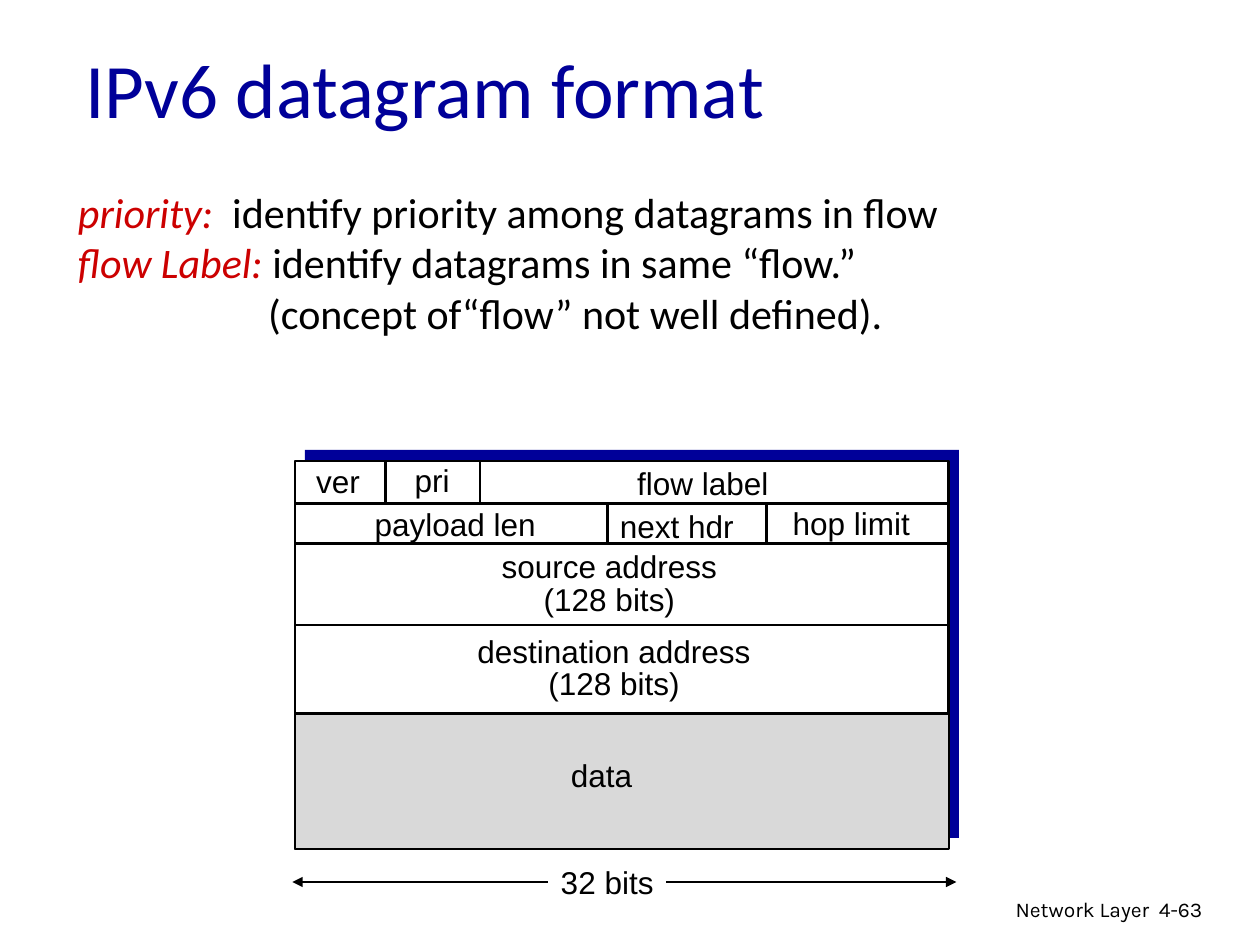
from lxml import etree
from pptx import Presentation
from pptx.dml.color import RGBColor
from pptx.enum.shapes import MSO_CONNECTOR, MSO_SHAPE
from pptx.enum.text import MSO_ANCHOR, PP_ALIGN
from pptx.oxml.ns import qn
from pptx.util import Inches, Pt

RECTANGLE, STRAIGHT = MSO_SHAPE.RECTANGLE, MSO_CONNECTOR.STRAIGHT
TOP, MIDDLE = MSO_ANCHOR.TOP, MSO_ANCHOR.MIDDLE
LEFT, CENTER, RIGHT = PP_ALIGN.LEFT, PP_ALIGN.CENTER, PP_ALIGN.RIGHT

COLORS = {"navy": "000099", "red": "CC0000", "black": "000000",
          "white": "FFFFFF", "gray": "D9D9D9"}

ROW_EDGES = [11, 21.3, 42.2, 65]
COLUMN_EDGES = [(13.9, 0, 0), (28.3, 0, 0), (47.8, 0, 1), (72.1, 0, 1)]
COLUMN_EDGES = [(x, [0, 11, 21.3][row], [11, 21.3][row]) for x, _, row in COLUMN_EDGES]
FIELDS = [
    (["ver"], 6.6, 5.2), (["pri"], 21, 4.9), (["flow label"], 62.4, 5.5),
    (["payload len"], 24.5, 16.2), (["next hdr"], 58.4, 16.6), (["hop limit"], 85.1, 15.9),
    (["source address", "(128 bits)"], 48.1, 32),
    (["destination address", "(128 bits)"], 48.8, 53.7),
    (["data"], 46.9, 80.8),
]
DEFINITIONS = [
    ("priority:", "  identify priority among datagrams in flow", 0),
    ("flow Label:", " identify datagrams in same “flow.”", 0),
    ("", "(concept of“flow” not well defined).", 1.51),
]


def color(name):
    """Return the named colour."""
    return RGBColor.from_string(COLORS[name])


def add_rect(slide, box, fill, line_width=0):
    """Draw a filled rectangle, outlined in black if a width is given."""
    rect = slide.shapes.add_shape(RECTANGLE, *map(Inches, box))
    rect.shadow.inherit = False
    rect.fill.solid()
    rect.fill.fore_color.rgb = color(fill)
    if line_width:
        rect.line.color.rgb = color("black")
        rect.line.width = Pt(line_width)
    else:
        rect.line.fill.background()


def add_line(slide, start, end, width, arrow=None):
    """Draw a black line, with an arrowhead at the named end if given."""
    line = slide.shapes.add_connector(STRAIGHT, *map(Inches, (*start, *end)))
    line.line.color.rgb = color("black")
    line.line.width = Pt(width)
    properties = line.element.spPr
    if arrow:
        etree.SubElement(properties.find(qn("a:ln")), qn(f"a:{arrow}"), type="triangle")
    etree.SubElement(properties, qn("a:effectLst"))


def add_text(slide, box, lines, font, size, ink="black", align=LEFT, anchor=TOP,
             spacing=1, wrap=True):
    """Place lines of text in a box and return its paragraphs."""
    frame = slide.shapes.add_textbox(*map(Inches, box)).text_frame
    frame.word_wrap = wrap
    frame.vertical_anchor = anchor
    frame.text = "\n".join(lines)
    for paragraph in frame.paragraphs:
        paragraph.alignment = align
        paragraph.line_spacing = spacing
        paragraph.font.name = font
        paragraph.font.size = Pt(size)
        paragraph.font.color.rgb = color(ink)
    return frame.paragraphs


def add_definitions(slide, box):
    """Write the field definitions, each opening with its red term."""
    paragraphs = add_text(slide, box, [""] * len(DEFINITIONS), "Calibri", 24)
    for paragraph, (term, meaning, indent) in zip(paragraphs, DEFINITIONS):
        if term:
            term_run = paragraph.add_run()
            term_run.text = term
            term_run.font.italic = True
            term_run.font.color.rgb = color("red")
        paragraph.add_run().text = meaning
        if indent:
            paragraph._p.get_or_add_pPr().set("marL", str(Inches(indent)))


def add_datagram(slide, box):
    """Draw the header fields and payload in percent of the box."""
    left, top, width, height = box

    def point(x, y):
        """Turn percentages of the box into a slide position."""
        return left + width * x / 100, top + height * y / 100

    add_rect(slide, (left + 0.08, top - 0.09, width, height), "navy")
    add_rect(slide, box, "white", 1.5)
    payload_left, payload_top = point(0, ROW_EDGES[-1])
    add_rect(slide, (payload_left, payload_top, width, top + height - payload_top), "gray", 0.75)
    for y in ROW_EDGES:
        add_line(slide, point(0, y), point(100, y), 1.5)
    for x, upper, lower in COLUMN_EDGES:
        add_line(slide, point(x, min(upper, lower)), point(x, max(upper, lower)), 1.5)
    for lines, x, y in FIELDS:
        center_x, center_y = point(x, y)
        label_width = 0.3 + 0.12 * max(map(len, lines))
        label_height = 0.4 if len(lines) == 1 else 0.61
        add_text(slide, (center_x - label_width / 2, center_y - label_height / 2,
                         label_width, label_height), lines, "Arial", 18, align=CENTER,
                 anchor=MIDDLE, spacing=1 if len(lines) == 1 else 0.85, wrap=False)


def add_width_ruler(slide, box):
    """Draw the arrows and caption that give the datagram's width."""
    left, top, width, height = box
    caption_width = 0.94
    caption_left = left + width * 0.385
    middle = top + height / 2
    add_line(slide, (caption_left, middle), (left, middle), 0.75, "tailEnd")
    add_line(slide, (caption_left + caption_width, middle), (left + width, middle), 0.75, "tailEnd")
    add_text(slide, (caption_left, top, caption_width, height), ["32 bits"], "Arial", 18,
             align=CENTER, anchor=MIDDLE, wrap=False)


def add_footer(slide, box):
    """Write the chapter name and the page number side by side."""
    left, top, width, height = box
    number_width = 0.74
    chapter_width = width - number_width + 0.12
    add_text(slide, (left, top, chapter_width, height), ["Network Layer"], "Karla", 12, align=RIGHT)
    add_text(slide, (left + width - number_width, top, number_width, height),
             ["4-63"], "Karla", 12)


def main():
    """Build and save the slide."""
    deck = Presentation()
    deck.slide_width, deck.slide_height = Inches(10), Inches(7.5)
    slide = deck.slides.add_slide(deck.slide_layouts[6])
    add_footer(slide, (6.05, 7.07, 3.79, 0.3))
    add_text(slide, (0.58, 0.2, 8.5, 0.99), ["IPv6 datagram format"], "Calibri", 44,
             "navy", anchor=MIDDLE)
    add_definitions(slide, (0.52, 1.43, 8.22, 1.97))
    add_datagram(slide, (2.34, 3.66, 5.19, 3.08))
    add_width_ruler(slide, (2.32, 6.8, 5.27, 0.4))
    deck.save("out.pptx")


if __name__ == "__main__":
    main()
